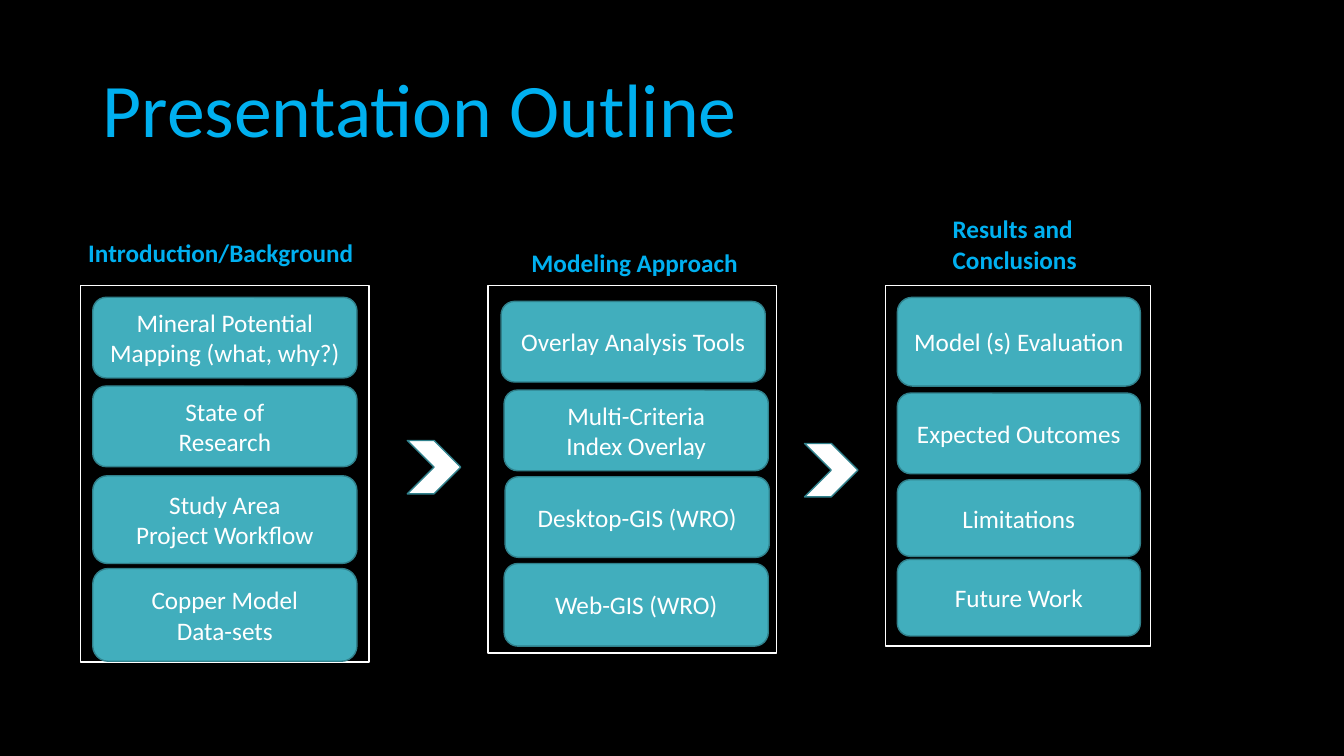
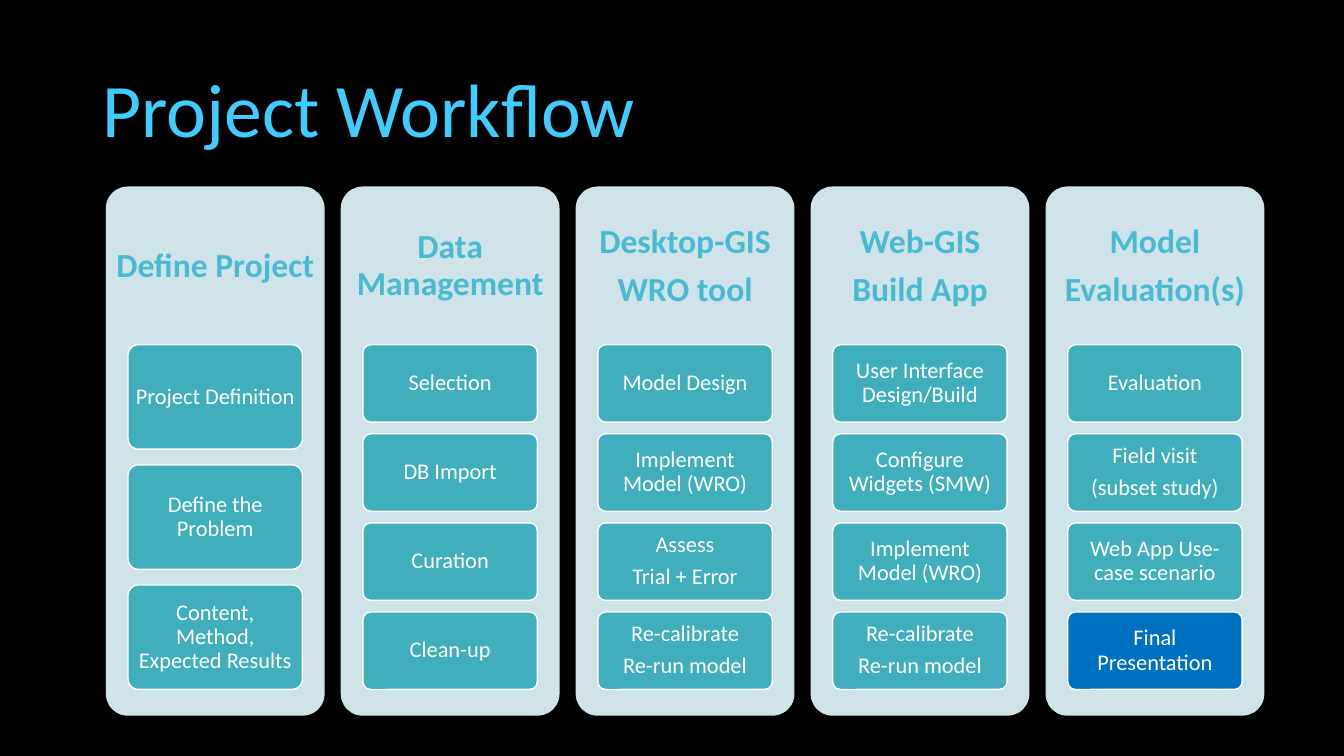
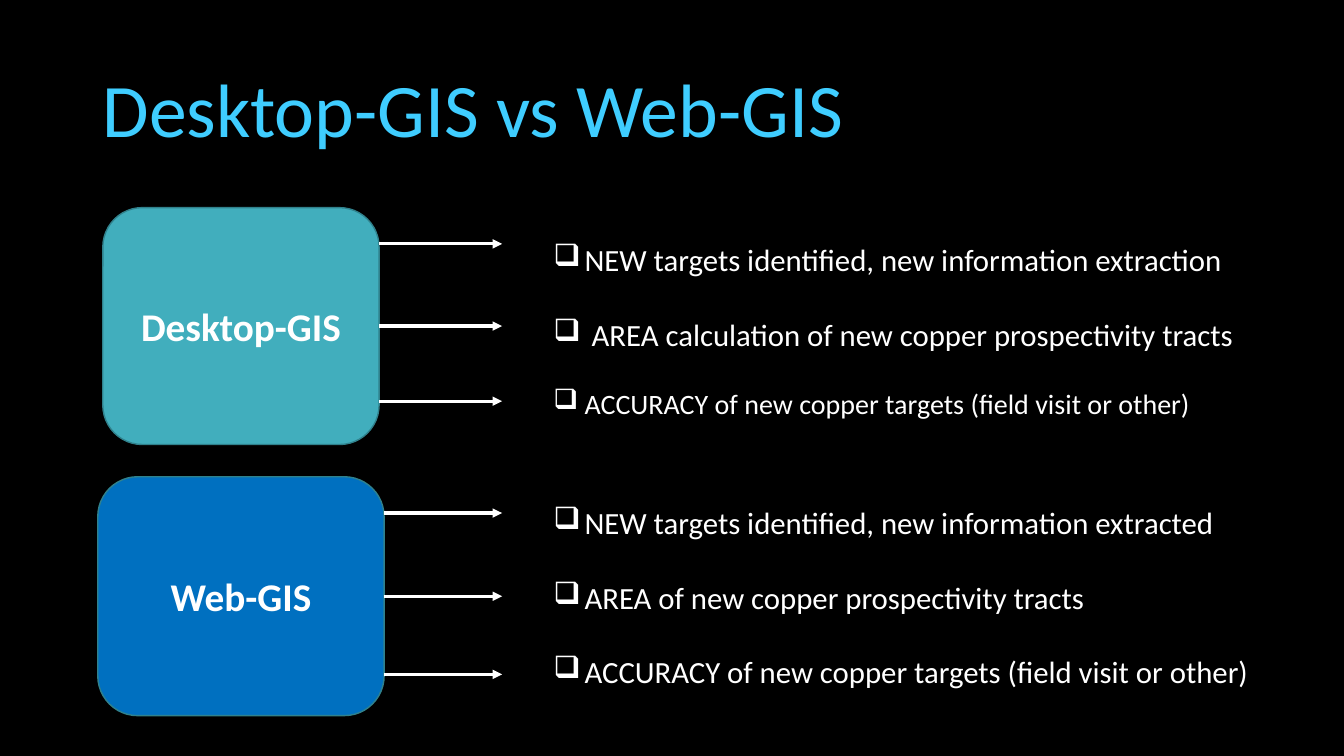
from dataclasses import dataclass

from lxml.etree import SubElement
from pptx import Presentation
from pptx.dml.color import RGBColor
from pptx.enum.shapes import MSO_CONNECTOR as Connector, MSO_SHAPE as Shape
from pptx.enum.text import MSO_ANCHOR as Anchor, PP_ALIGN as Align
from pptx.oxml.ns import qn
from pptx.util import Inches, Pt


@dataclass(frozen=True)
class Theme:
    font: str = "Calibri"
    black: str = "000000"
    white: str = "FFFFFF"
    teal: str = "41AEBD"
    teal_edge: str = "30818C"
    blue: str = "0070C0"
    pale: str = "CFE3E8"
    column_title: str = "49BBD1"
    outline_title: str = "00B0F0"
    title: str = "3FCDFF"
    title_size: int = 54
    block_size: int = 28
    column_size: int = 24
    bullet_size: int = 22
    small_bullet_size: int = 20
    body_size: int = 18
    step_size: int = 16


@dataclass(frozen=True)
class Box:
    left: float
    top: float
    width: float
    height: float

    def inner(self, left, top, width, height):
        return Box(self.left + left, self.top + top, width, height)

    def lengths(self):
        return [Inches(n) for n in (self.left, self.top, self.width, self.height)]


THEME = Theme()
TITLE_BOX = Box(0.92, 0.4, 11.5, 1.45)
SINGLE_LINE = 1.22


def color(value):
    return RGBColor.from_string(value)


def write_para(para, text, size=THEME.body_size, ink=THEME.white, bold=False,
               align=Align.CENTER, line=None, before=0, bullet=None, indent=0):
    para.alignment = align
    para.space_before = Pt(before)
    if line:
        para.line_spacing = line
    if bullet:
        props = para._p.get_or_add_pPr()
        props.set("marL", str(Inches(indent)))
        props.set("indent", str(-Inches(indent)))
        SubElement(props, qn("a:buChar")).set("char", bullet)
    span = para.add_run()
    span.text = text
    span.font.name = THEME.font
    span.font.size = Pt(size)
    span.font.bold = bold
    span.font.color.rgb = color(ink)


def write_text(shape, text, anchor=Anchor.MIDDLE, insets=(0.1, 0.05), gap=0, **style):
    frame = shape.text_frame
    frame.word_wrap = True
    frame.vertical_anchor = anchor
    frame.margin_left = frame.margin_right = Inches(insets[0])
    frame.margin_top = frame.margin_bottom = Inches(insets[1])
    for index, words in enumerate(text.split("\n")):
        para = frame.add_paragraph() if index else frame.paragraphs[0]
        write_para(para, words, before=gap if index else 0, **style)


def add_label(page, box, text, **style):
    write_text(page.shapes.add_textbox(*box.lengths()), text, **style)


def add_block(page, box, kind=Shape.ROUNDED_RECTANGLE, fill=THEME.teal,
              edge=THEME.teal_edge, corner=None):
    block = page.shapes.add_shape(kind, *box.lengths())
    block.shadow.inherit = False
    if corner is not None:
        block.adjustments[0] = corner
    if fill:
        block.fill.solid()
        block.fill.fore_color.rgb = color(fill)
    else:
        block.fill.background()
    if edge:
        block.line.color.rgb = color(edge)
        block.line.width = Pt(1)
    else:
        block.line.fill.background()
    return block


def add_arrow(page, start, end, y, source=None):
    arrow = page.shapes.add_connector(
        Connector.STRAIGHT, Inches(start), Inches(y), Inches(end), Inches(y))
    if source is not None:
        arrow.begin_connect(source, 3)
        arrow.end_y = arrow.begin_y
    arrow.line.color.rgb = color(THEME.white)
    arrow.line.width = Pt(2.25)
    SubElement(arrow.line._get_or_add_ln(), qn("a:tailEnd")).set("type", "triangle")
    SubElement(arrow._element.spPr, qn("a:effectLst"))


def add_page(deck, title, ink=THEME.title):
    page = deck.slides.add_slide(deck.slide_layouts[6])
    add_label(page, TITLE_BOX, title, size=THEME.title_size, ink=ink,
              align=Align.LEFT, line=0.9)
    return page


def outline_column(page, box, heading, heading_place, steps, step_width,
                   align=Align.CENTER):
    add_block(page, box, Shape.RECTANGLE, fill=None, edge=THEME.white)
    add_label(page, box.inner(*heading_place), heading, anchor=Anchor.TOP,
              ink=THEME.outline_title, bold=True, align=align)
    for text, left, top, height in steps:
        step = add_block(page, box.inner(left, top, step_width, height))
        write_text(step, text)


def outline_page(deck):
    page = add_page(deck, "Presentation Outline", THEME.outline_title)
    outline_column(
        page, Box(0.8, 2.83, 2.86, 3.74),
        "Introduction/Background", (-0.1, -0.52, 2.98, 0.4),
        [("Mineral Potential Mapping (what, why?)", 0.12, 0.12, 0.8),
         ("State of\nResearch", 0.12, 1, 0.8),
         ("Study Area\nProject Workflow", 0.12, 1.89, 0.87),
         ("Copper Model\nData-sets", 0.12, 2.81, 0.92)], 2.62)
    outline_column(
        page, Box(4.84, 2.83, 2.86, 3.65),
        "Modeling Approach", (0.17, -0.43, 2.57, 0.4),
        [("Overlay Analysis Tools", 0.13, 0.16, 0.8),
         ("Multi-Criteria\nIndex Overlay", 0.16, 1.04, 0.8),
         ("Desktop-GIS (WRO)", 0.17, 1.9, 0.8),
         ("Web-GIS (WRO)", 0.16, 2.76, 0.82)], 2.62)
    outline_column(
        page, Box(8.78, 2.83, 2.63, 3.58),
        "Results and Conclusions", (0.57, -0.76, 1.65, 0.71),
        [("Model (s) Evaluation", 0.12, 0.12, 0.88),
         ("Expected Outcomes", 0.12, 1.07, 0.8),
         ("Limitations", 0.12, 1.93, 0.76),
         ("Future Work", 0.12, 2.72, 0.76)], 2.41, align=Align.LEFT)
    for left, top in ((4.04, 4.37), (7.98, 4.4)):
        add_block(page, Box(left, top, 0.53, 0.53), Shape.CHEVRON, fill=THEME.white)


def workflow_column(page, box, heading, steps, final=None):
    add_block(page, box, fill=THEME.pale, edge=None, corner=0.1)
    add_label(page, box.inner(0, 0, box.width, 1.58), heading, insets=(0.09, 0.1),
              size=THEME.column_size, ink=THEME.column_title, bold=True,
              line=0.9, gap=0.35 * THEME.column_size)
    gap_share = 0.15
    height = 3.42 / (len(steps) + gap_share * (len(steps) - 1))
    for index, text in enumerate(steps):
        place = box.inner(0.22, 1.57 + index * height * (1 + gap_share), 1.73, height)
        fill = THEME.blue if text == final else THEME.teal
        step = add_block(page, place, fill=fill, edge=THEME.white, corner=0.1)
        write_text(step, text, insets=(0.04, 0.03), size=THEME.step_size,
                   line=0.9, gap=0.35 * THEME.step_size)


def workflow_page(deck):
    page = add_page(deck, "Project Workflow")
    rerun = "Re-calibrate\nRe-run model"
    implement = "Implement Model (WRO)"
    final = "Final Presentation"
    columns = [
        ("Define Project", ["Project Definition", "Define the Problem",
                            "Content, Method, Expected Results"]),
        ("Data Management", ["Selection", "DB Import", "Curation", "Clean-up"]),
        ("Desktop-GIS\nWRO tool", ["Model Design", implement,
                                   "Assess\nTrial + Error", rerun]),
        ("Web-GIS\nBuild App", ["User Interface Design/Build",
                                "Configure Widgets (SMW)", implement, rerun]),
        ("Model\nEvaluation(s)", ["Evaluation", "Field visit\n(subset study)",
                                  "Web App Use-case scenario", final]),
    ]
    for index, (heading, steps) in enumerate(columns):
        workflow_column(page, Box(1.05 + 2.33 * index, 1.85, 2.17, 5.25),
                        heading, steps, final)


def comparison_row(page, box, name, fill, arrow_offsets, list_box, bullets):
    block = add_block(page, box, fill=fill)
    write_text(block, name, size=THEME.block_size, bold=True)
    middle = arrow_offsets[1]
    for offset in arrow_offsets:
        add_arrow(page, box.left + box.width, 4.98, box.top + offset,
                  block if offset == middle else None)
    frame = page.shapes.add_textbox(*list_box.lengths()).text_frame
    frame.word_wrap = True
    for index, (text, size, indent) in enumerate(bullets):
        para = frame.add_paragraph() if index else frame.paragraphs[0]
        write_para(para, text, size=size, align=Align.LEFT, bullet="❑", indent=indent,
                   before=SINGLE_LINE * size if index else 0)


def comparison_page(deck):
    page = add_page(deck, "Desktop-GIS vs Web-GIS")
    large, small = THEME.bullet_size, THEME.small_bullet_size
    accuracy = "ACCURACY of new copper targets (field visit or other)"
    comparison_row(
        page, Box(1.02, 2.06, 2.74, 2.35), "Desktop-GIS", THEME.teal,
        (0.36, 1.18, 1.92), Box(5.39, 2.34, 7.47, 2.83),
        [("NEW targets identified, new information extraction", large, 0.31),
         ("AREA calculation of new copper prospectivity tracts", large, 0.38),
         (accuracy, small, 0.31)])
    comparison_row(
        page, Box(0.97, 4.73, 2.84, 2.37), "Web-GIS", THEME.blue,
        (0.36, 1.18, 1.96), Box(5.39, 4.95, 7.47, 2.26),
        [("NEW targets identified, new information extracted", large, 0.31),
         ("AREA of new copper prospectivity tracts", large, 0.31),
         (accuracy, large, 0.31)])


def main():
    deck = Presentation()
    deck.slide_width, deck.slide_height = Inches(13.33), Inches(7.5)
    backdrop = deck.slide_master.background.fill
    backdrop.solid()
    backdrop.fore_color.rgb = color(THEME.black)
    outline_page(deck)
    workflow_page(deck)
    comparison_page(deck)
    deck.save("out.pptx")


if __name__ == "__main__":
    main()
